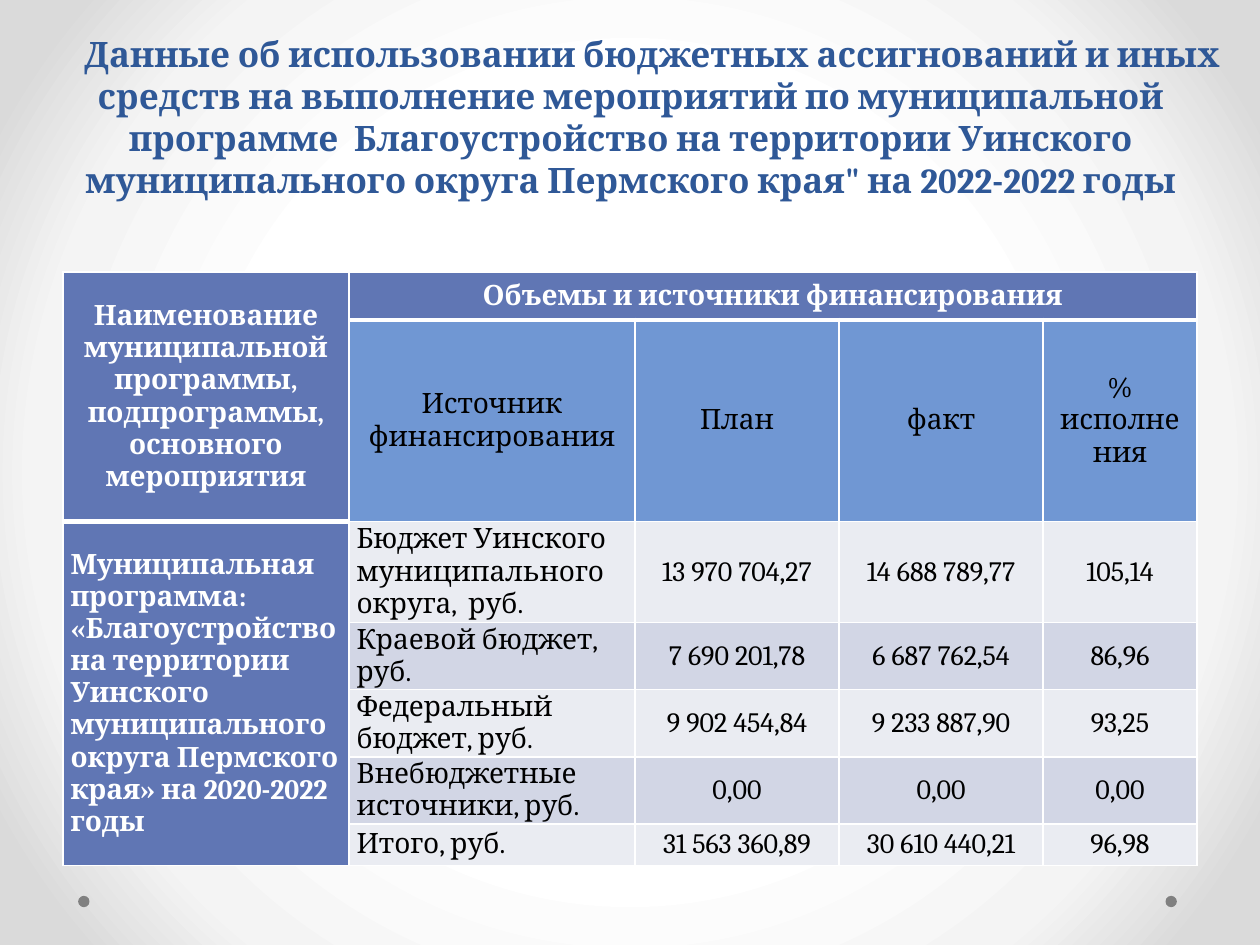
"""Build the slide on programme funding: a title and a table of plan and actual spending."""
import pptx
import pptx.dml.color
import pptx.enum.shapes
import pptx.enum.text
import pptx.oxml
import pptx.oxml.ns
import pptx.util

Inches = pptx.util.Inches
Pt = pptx.util.Pt
RGB = pptx.dml.color.RGBColor.from_string
ALIGN = pptx.enum.text.PP_ALIGN
THEME = {
    "font": "Cambria", "title_size": 20, "table_size": 16,
    "title": "2F5897", "text": "000000", "light": "FFFFFF", "dot": "808080",
    "header": "6076B4", "subheader": "7097D3", "bands": ("EAECF2", "D2D6E5"),
    "glow": ((50, "FFFFFF"), (76, "F4F4F4"), (92, "DADADA")),
}


def style_text(p, size, color, bold, align):
    p.alignment = align
    for r in p.runs:
        r.font.name = THEME["font"]
        r.font.size = Pt(size)
        r.font.bold = bold
        r.font.color.rgb = RGB(color)


def set_borders(cell, bottom):
    tc_pr = cell._tc.get_or_add_tcPr()
    for side, width in (("L", 1), ("R", 1), ("T", 1), ("B", bottom)):
        tc_pr.append(pptx.oxml.parse_xml(
            f'<a:ln{side} {pptx.oxml.ns.nsdecls("a")} w="{Pt(width)}"><a:solidFill>'
            f'<a:srgbClr val="{THEME["light"]}"/></a:solidFill></a:ln{side}>'))


prs = pptx.Presentation()
prs.slide_width, prs.slide_height = Inches(10), Inches(7.5)
s = prs.slides.add_slide(prs.slide_layouts[6])

stops = "".join(f'<a:gs pos="{pos * 1000}"><a:srgbClr val="{color}"/></a:gs>'
                for pos, color in THEME["glow"])
s.background.fill.solid()
bg_pr = s.background._cSld.bg.bgPr
bg_pr.replace(bg_pr[0], pptx.oxml.parse_xml(
    f'<a:gradFill {pptx.oxml.ns.nsdecls("a")} rotWithShape="1"><a:gsLst>{stops}</a:gsLst>'
    '<a:path path="circle"><a:fillToRect l="50000" t="50000" r="50000" b="50000"/></a:path>'
    '</a:gradFill>'))

for left in (9.25, 0.62):
    sp = s.shapes.add_shape(pptx.enum.shapes.MSO_SHAPE.OVAL,
                            Inches(left), Inches(7.11), Inches(0.09), Inches(0.09))
    sp.shadow.inherit = False
    sp.fill.solid()
    sp.fill.fore_color.rgb = RGB(THEME["dot"])
    sp.line.fill.background()

tf = s.shapes.add_textbox(Inches(0.2), Inches(0.21), Inches(9.61), Inches(1.45)).text_frame
tf.word_wrap = True
tf.auto_size = pptx.enum.text.MSO_AUTO_SIZE.SHAPE_TO_FIT_TEXT
p = tf.paragraphs[0]
p.text = ("Данные об использовании бюджетных ассигнований и иных средств на выполнение "
          "мероприятий по муниципальной программе  Благоустройство на территории Уинского "
          "муниципального округа Пермского края\" на 2022-2022 годы")
style_text(p, THEME["title_size"], THEME["title"], True, ALIGN.CENTER)
p._p.get_or_add_pPr().set("indent", str(Inches(0.34)))

rows = [
    ("Наименование муниципальной программы, подпрограммы, основного мероприятия",
     "Объемы и источники финансирования", "", "", ""),
    ("", "Источник финансирования", "План", "факт", "% исполнения"),
    ("Муниципальная программа: «Благоустройство на территории Уинского муниципального "
     "округа Пермского края» на 2020-2022 годы",
     "Бюджет Уинского муниципального округа,  руб.", "13 970 704,27", "14 688 789,77", "105,14"),
    ("", "Краевой бюджет, руб.", "7 690 201,78", "6 687 762,54", "86,96"),
    ("", "Федеральный бюджет, руб.", "9 902 454,84", "9 233 887,90", "93,25"),
    ("", "Внебюджетные источники, руб.", "0,00", "0,00", "0,00"),
    ("", "Итого, руб.", "31 563 360,89", "30 610 440,21", "96,98"),
]
table = s.shapes.add_table(len(rows), 5, Inches(0.5), Inches(2.16), Inches(9), Inches(4.03)).table
for column, width in zip(table.columns, (2.27, 2.27, 1.62, 1.62, 1.22)):
    column.width = Inches(width)
for row, height in zip(table.rows, (0.38, 1.17, 0.78, 0.33, 0.52, 0.52, 0.33)):
    row.height = Inches(height)
for first, last in (((0, 0), (1, 0)), ((0, 1), (0, 4)), ((2, 0), (6, 0))):
    table.cell(*first).merge(table.cell(*last))

for i, texts in enumerate(rows):
    for j, text in enumerate(texts):
        cell = table.cell(i, j)
        heading = i == 0 or j == 0
        set_borders(cell, 3 if i == 0 or (i, j) == (1, 0) else 1)
        cell.fill.solid()
        cell.fill.fore_color.rgb = RGB(
            THEME["header"] if heading else THEME["subheader"] if i == 1 else THEME["bands"][i % 2])
        cell.margin_left = cell.margin_right = Inches(0.06)
        cell.margin_top = cell.margin_bottom = 0
        cell.vertical_anchor = pptx.enum.text.MSO_ANCHOR.MIDDLE
        if text:
            cell.text_frame.text = text
            style_text(cell.text_frame.paragraphs[0], THEME["table_size"],
                       THEME["light"] if heading else THEME["text"], heading,
                       ALIGN.LEFT if i > 1 and j < 2 else ALIGN.CENTER)

prs.save("out.pptx")
